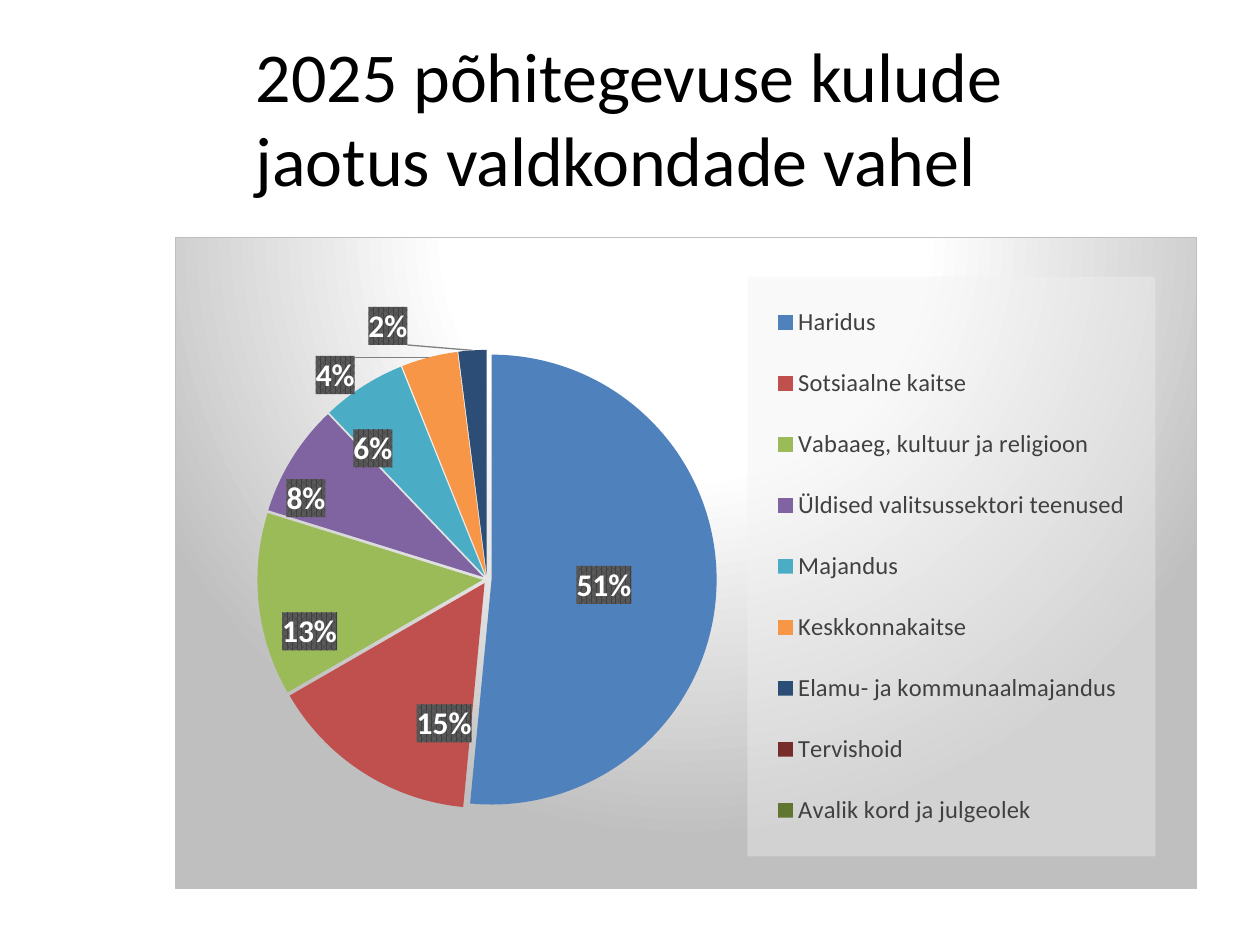
from dataclasses import dataclass
from typing import Optional

from lxml.etree import _Element
from pptx import Presentation
from pptx.chart.chart import Chart
from pptx.chart.data import CategoryChartData
from pptx.dml.color import RGBColor
from pptx.enum.chart import XL_CHART_TYPE, XL_LEGEND_POSITION
from pptx.enum.text import MSO_ANCHOR, MSO_AUTO_SIZE, PP_ALIGN
from pptx.oxml import parse_xml
from pptx.oxml.ns import nsdecls, qn
from pptx.util import Inches, Pt


@dataclass(frozen=True)
class Theme:
    font: str = "Calibri"
    title_size: int = 40
    label_size: int = 18
    legend_size: int = 14
    text: str = "000000"
    legend_text: str = "404040"
    label_text: str = "FFFFFF"
    label_front: str = "404040"
    label_back: str = "595959"
    light: str = "FFFFFF"
    shade: str = "BFBFBF"
    legend_fill: str = "F2F2F2"


@dataclass(frozen=True)
class Sector:
    """One budget area; shift moves its label, as fractions of the chart."""
    name: str
    percent: Optional[int]
    color: str
    shift: tuple[float, float] = (0, 0)


THEME = Theme()
SECTORS = [
    Sector("Haridus", 51, "4F81BD"),
    Sector("Sotsiaalne kaitse", 15, "C0504D", (0.02, 0.07)),
    Sector("Vabaaeg, kultuur ja religioon", 13, "9BBB59", (-0.06, 0.06)),
    Sector("Üldised valitsussektori teenused", 8, "8064A2", (-0.08, -0.03)),
    Sector("Majandus", 6, "4BACC6", (-0.05, -0.05)),
    Sector("Keskkonnakaitse", 4, "F79646", (-0.12, -0.14)),
    Sector("Elamu- ja kommunaalmajandus", 2, "2C4D75", (-0.09, -0.21)),
    Sector("Tervishoid", 0, "772C2A", (0.13, -0.17)),
    Sector("Avalik kord ja julgeolek", None, "5F7530"),
]


def chart_xml(tag: str, content: str) -> _Element:
    return parse_xml(f'<c:{tag} {nsdecls("c", "a")}>{content}</c:{tag}>')


def solid(color: str, alpha: int = 100) -> str:
    return (f'<a:solidFill><a:srgbClr val="{color}"><a:alpha val="{alpha * 1000}"/>'
            "</a:srgbClr></a:solidFill>")


def format_font(font, *, size: int, color: str, bold: bool = False) -> None:
    font.name = THEME.font
    font.size = Pt(size)
    font.bold = bold
    font.color.rgb = RGBColor.from_string(color)


def set_text(shape, text: str, *, size: int, color: str,
             align: PP_ALIGN = PP_ALIGN.LEFT) -> None:
    frame = shape.text_frame
    frame.text = text
    frame.word_wrap = True
    frame.auto_size = MSO_AUTO_SIZE.NONE
    frame.vertical_anchor = MSO_ANCHOR.MIDDLE
    paragraph = frame.paragraphs[0]
    paragraph.alignment = align
    format_font(paragraph.runs[0].font, size=size, color=color)


def manual_layout(x: float, y: float, width: float, height: float,
                  inner: bool = False) -> _Element:
    target = '<c:layoutTarget val="inner"/>' if inner else ""
    return chart_xml("layout", (
        f'<c:manualLayout>{target}<c:xMode val="edge"/><c:yMode val="edge"/>'
        f'<c:x val="{x}"/><c:y val="{y}"/><c:w val="{width}"/><c:h val="{height}"/>'
        "</c:manualLayout>"))


def remove_layout(element: _Element) -> None:
    for layout in element.findall(qn("c:layout")):
        element.remove(layout)


def style_background(chart: Chart) -> None:
    stops = "".join(
        f'<a:gs pos="{position * 1000}"><a:srgbClr val="{color}"/></a:gs>'
        for position, color in [(0, THEME.light), (39, THEME.light), (100, THEME.shade)])
    properties = chart_xml("spPr", (
        f'<a:gradFill><a:gsLst>{stops}</a:gsLst><a:path path="circle">'
        '<a:fillToRect l="50000" t="-80000" r="50000" b="180000"/></a:path></a:gradFill>'
        f'<a:ln w="{Pt(0.75)}">{solid(THEME.shade)}</a:ln>'))
    chart._chartSpace.find(qn("c:chart")).addnext(properties)


def style_legend(chart: Chart) -> None:
    chart.has_legend = True
    legend = chart.legend
    legend.position = XL_LEGEND_POSITION.RIGHT
    legend.include_in_layout = False
    format_font(legend.font, size=THEME.legend_size, color=THEME.legend_text)
    remove_layout(legend._element)
    overlay = legend._element.find(qn("c:overlay"))
    overlay.addprevious(manual_layout(0.56, 0.06, 0.4, 0.89))
    overlay.addnext(chart_xml("spPr", solid(THEME.legend_fill, 39) + "<a:ln><a:noFill/></a:ln>"))


def label_elements() -> _Element:
    """Build the percent labels with their patterned boxes and shifts."""
    body = (
        '<c:numFmt formatCode="0&quot;%&quot;" sourceLinked="0"/>'
        '<c:spPr><a:pattFill prst="pct75">'
        f'<a:fgClr><a:srgbClr val="{THEME.label_front}"/></a:fgClr>'
        f'<a:bgClr><a:srgbClr val="{THEME.label_back}"/></a:bgClr></a:pattFill>'
        "<a:ln><a:noFill/></a:ln></c:spPr>"
        "<c:txPr><a:bodyPr/><a:lstStyle/><a:p><a:pPr>"
        f'<a:defRPr sz="{THEME.label_size * 100}" b="1">{solid(THEME.label_text)}'
        f'<a:latin typeface="{THEME.font}"/></a:defRPr></a:pPr>'
        '<a:endParaRPr lang="et-EE"/></a:p></c:txPr><c:dLblPos val="ctr"/>'
        '<c:showLegendKey val="0"/><c:showVal val="1"/><c:showCatName val="0"/>'
        '<c:showSerName val="0"/><c:showPercent val="0"/><c:showBubbleSize val="0"/>')
    labels = "".join(
        f'<c:dLbl><c:idx val="{index}"/><c:layout><c:manualLayout>'
        f'<c:x val="{sector.shift[0]}"/><c:y val="{sector.shift[1]}"/>'
        f"</c:manualLayout></c:layout>{body}</c:dLbl>"
        for index, sector in enumerate(SECTORS) if any(sector.shift))
    leader = (f'<c:showLeaderLines val="1"/><c:leaderLines><c:spPr><a:ln w="{Pt(0.75)}">'
              f'{solid("808080")}</a:ln></c:spPr></c:leaderLines>')
    return chart_xml("dLbls", labels + body + leader)


def style_slices(chart: Chart) -> None:
    plot = chart.plots[0]
    plot.vary_by_categories = True
    series = plot.series[0]
    for index, sector in enumerate(SECTORS):
        fill = series.points[index].format.fill
        fill.solid()
        fill.fore_color.rgb = RGBColor.from_string(sector.color)
    element = series._element
    explosion = chart_xml("explosion", "")
    explosion.set("val", "2")
    element.find(qn("c:dPt")).addprevious(explosion)
    element.find(qn("c:cat")).addprevious(label_elements())


def add_pie(slide) -> None:
    data = CategoryChartData()
    data.categories = [sector.name for sector in SECTORS]
    data.add_series("Series 1", [sector.percent for sector in SECTORS])
    chart = slide.shapes.add_chart(
        XL_CHART_TYPE.PIE, Inches(1.39), Inches(1.88), Inches(8.11), Inches(5.18), data).chart
    chart.has_title = False
    format_font(chart.font, size=THEME.legend_size, color=THEME.text)
    plot_area = chart._chartSpace.find(".//" + qn("c:plotArea"))
    remove_layout(plot_area)
    plot_area.insert(0, manual_layout(0.08, 0.09, 0.45, 0.87, inner=True))
    style_background(chart)
    style_legend(chart)
    style_slices(chart)


def main() -> None:
    presentation = Presentation()
    presentation.slide_width, presentation.slide_height = Inches(10), Inches(7.5)
    slide = presentation.slides.add_slide(presentation.slide_layouts[5])
    title = slide.shapes.title
    title.left, title.top = Inches(1.93), Inches(0.3)
    title.width, title.height = Inches(7.57), Inches(1.25)
    set_text(title, "2025 põhitegevuse kulude jaotus valdkondade vahel",
             size=THEME.title_size, color=THEME.text)
    add_pie(slide)
    presentation.save("out.pptx")


if __name__ == "__main__":
    main()
